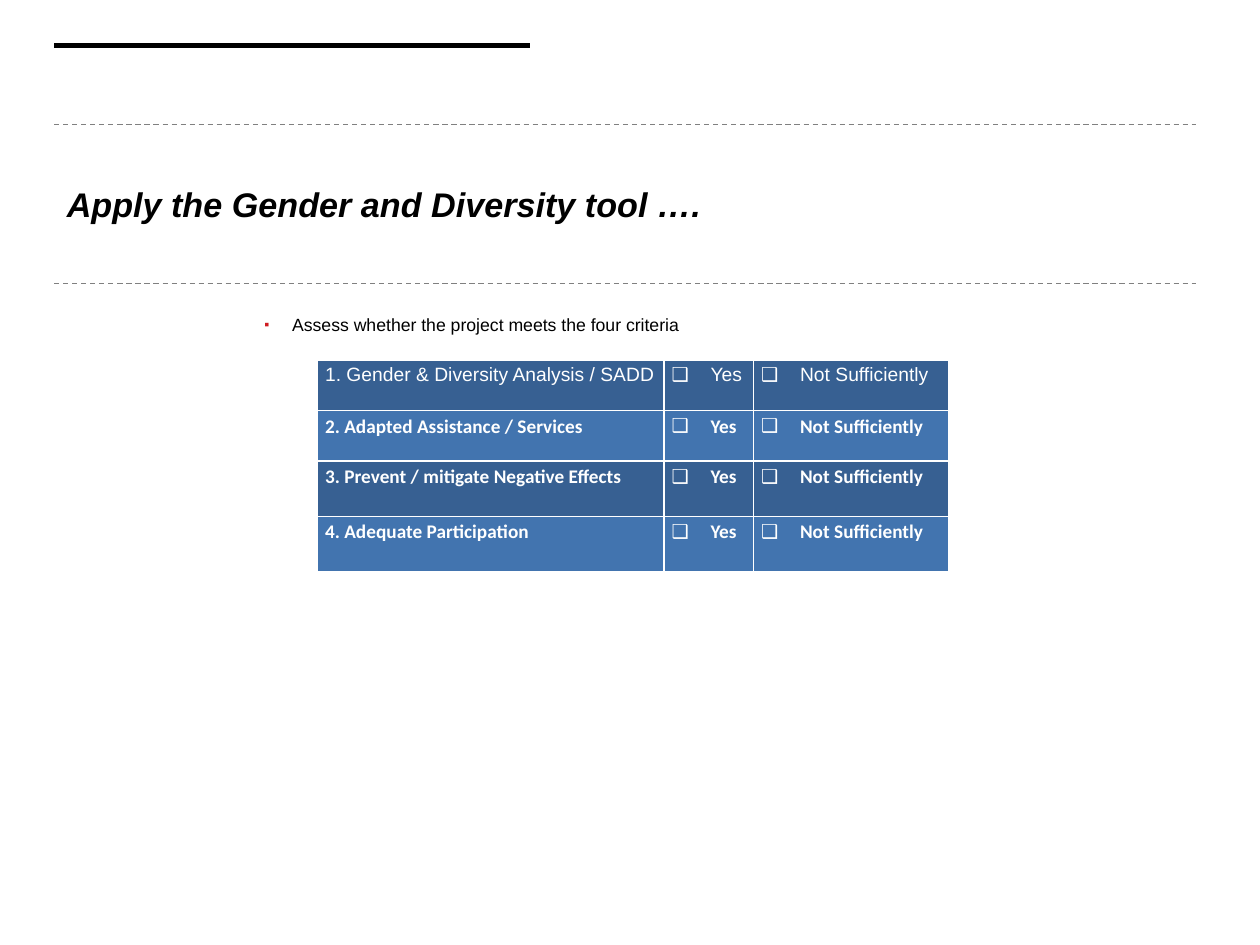
from lxml import etree
from pptx import Presentation
from pptx.dml.color import RGBColor
from pptx.enum.dml import MSO_LINE
from pptx.enum.shapes import MSO_CONNECTOR
from pptx.enum.text import MSO_ANCHOR, PP_ALIGN
from pptx.oxml.ns import qn
from pptx.util import Inches, Pt

BLACK = RGBColor(0x00, 0x00, 0x00)
WHITE = RGBColor(0xFF, 0xFF, 0xFF)
GRAY = RGBColor(0x80, 0x80, 0x80)
BULLET_RED = RGBColor(0xCF, 0x1C, 0x21)
DARK_BLUE = RGBColor(0x37, 0x60, 0x92)
MID_BLUE = RGBColor(0x42, 0x74, 0xAF)

LEFT, RIGHT = 0.43, 9.49
TITLE_TOP, TITLE_BOTTOM = 0.99, 2.25

CRITERIA = [
    "1. Gender & Diversity Analysis / SADD",
    "2. Adapted Assistance / Services",
    "3. Prevent / mitigate Negative Effects",
    "4. Adequate Participation",
]
ANSWERS = ["Yes", "Not Sufficiently"]
COLUMN_WIDTHS = [2.75, 0.71, 1.55]
ROW_HEIGHTS = [0.4, 0.4, 0.44, 0.44]


def add_bullet(paragraph, char, indent, color=None, percent=None):
    """Give the paragraph a hanging bullet; indent is in inches."""
    props = paragraph._p.get_or_add_pPr()
    props.set("marL", str(Inches(indent)))
    props.set("indent", str(-Inches(indent)))
    if color is not None:
        bullet_color = etree.SubElement(props, qn("a:buClr"))
        etree.SubElement(bullet_color, qn("a:srgbClr"), val=str(color))
    if percent:
        etree.SubElement(props, qn("a:buSzPct"), val=str(percent * 1000))
    etree.SubElement(props, qn("a:buFont"), typeface="Arial")
    etree.SubElement(props, qn("a:buChar"), char=char)


def write_text(frame, text, size, color=BLACK, font="Arial", bold=False,
               italic=False, bullet=None):
    frame.word_wrap = True
    paragraph = frame.paragraphs[0]
    paragraph.alignment = PP_ALIGN.LEFT
    if bullet:
        add_bullet(paragraph, **bullet)
    run = paragraph.add_run()
    run.text = text
    run.font.name = font
    run.font.size = Pt(size)
    run.font.bold = bold
    run.font.italic = italic
    run.font.color.rgb = color


def add_rule(slide, left, right, y, color, weight, dash=None):
    rule = slide.shapes.add_connector(
        MSO_CONNECTOR.STRAIGHT, Inches(left), Inches(y), Inches(right), Inches(y))
    rule.line.color.rgb = color
    rule.line.width = Pt(weight)
    if dash:
        rule.line.dash_style = dash
    etree.SubElement(rule._element.spPr, qn("a:effectLst"))


def add_rules(slide):
    add_rule(slide, LEFT, 4.21, 0.36, BLACK, 3)
    for y in (TITLE_TOP, TITLE_BOTTOM):
        add_rule(slide, LEFT, RIGHT, y, GRAY, 0.75, MSO_LINE.DASH)


def place_title(slide, left, top, width, height):
    title = slide.shapes.title
    title.left, title.top = Inches(left), Inches(top)
    title.width, title.height = Inches(width), Inches(height)
    title.text_frame.vertical_anchor = MSO_ANCHOR.MIDDLE
    write_text(title.text_frame, "Apply the Gender and Diversity tool ….", 19.5,
               bold=True, italic=True)


def add_instruction(slide, left, top, width, height):
    instruction = slide.shapes.add_textbox(
        Inches(left), Inches(top), Inches(width), Inches(height))
    write_text(instruction.text_frame,
               "Assess whether the project meets the four criteria", 10.1,
               bullet=dict(char="▪", indent=0.22, color=BULLET_RED, percent=80))


def format_cell(cell, fill):
    """Set the margins, white borders and fill of a cell."""
    cell.margin_left = cell.margin_right = Inches(0.06)
    cell.margin_top = cell.margin_bottom = Inches(0.03)
    props = cell._tc.get_or_add_tcPr()
    for side in ("lnL", "lnR", "lnT", "lnB"):
        border = etree.SubElement(props, qn(f"a:{side}"), w=str(Pt(1)))
        border_fill = etree.SubElement(border, qn("a:solidFill"))
        etree.SubElement(border_fill, qn("a:srgbClr"), val=str(WHITE))
    cell.fill.solid()
    cell.fill.fore_color.rgb = fill


def add_criteria_table(slide, left, top):
    table = slide.shapes.add_table(
        len(CRITERIA), len(COLUMN_WIDTHS), Inches(left), Inches(top),
        Inches(sum(COLUMN_WIDTHS)), Inches(sum(ROW_HEIGHTS))).table
    for column, width in zip(table.columns, COLUMN_WIDTHS):
        column.width = Inches(width)
    for r, (criterion, height) in enumerate(zip(CRITERIA, ROW_HEIGHTS)):
        table.rows[r].height = Inches(height)
        for c, text in enumerate([criterion, *ANSWERS]):
            cell = table.cell(r, c)
            format_cell(cell, MID_BLUE if r % 2 else DARK_BLUE)
            write_text(cell.text_frame, text, 11, WHITE,
                       font="Calibri" if r else "Arial", bold=r > 0,
                       bullet=dict(char="❑", indent=0.31) if c else None)


def main():
    prs = Presentation()
    prs.slide_width, prs.slide_height = Inches(10), Inches(7.5)
    slide = prs.slides.add_slide(prs.slide_layouts[5])
    add_rules(slide)
    place_title(slide, LEFT, TITLE_TOP, RIGHT - LEFT, 1.25)
    add_instruction(slide, 2, 2.44, 7.5, 4.58)
    add_criteria_table(slide, 2.52, 2.86)
    prs.save("out.pptx")


if __name__ == "__main__":
    main()
